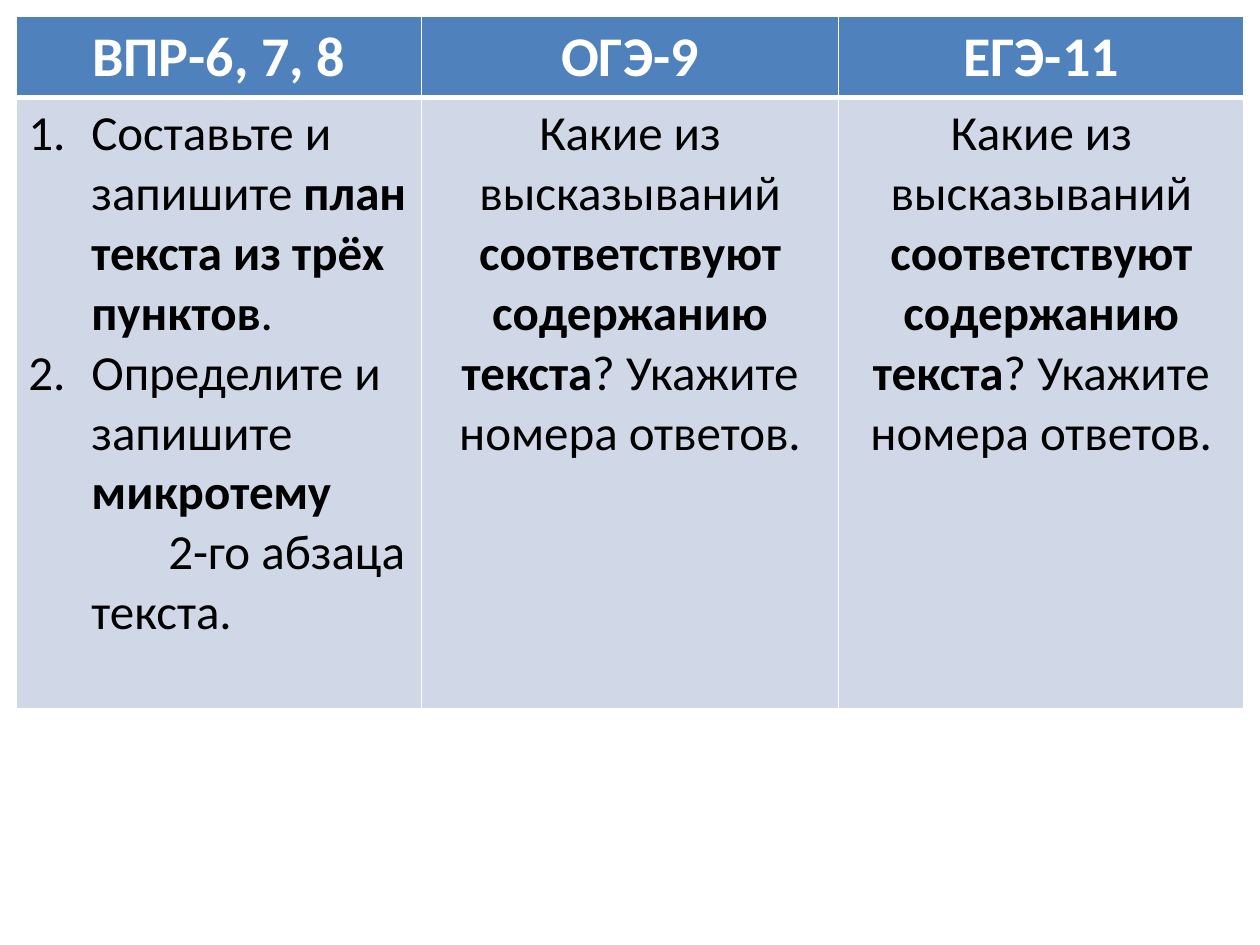
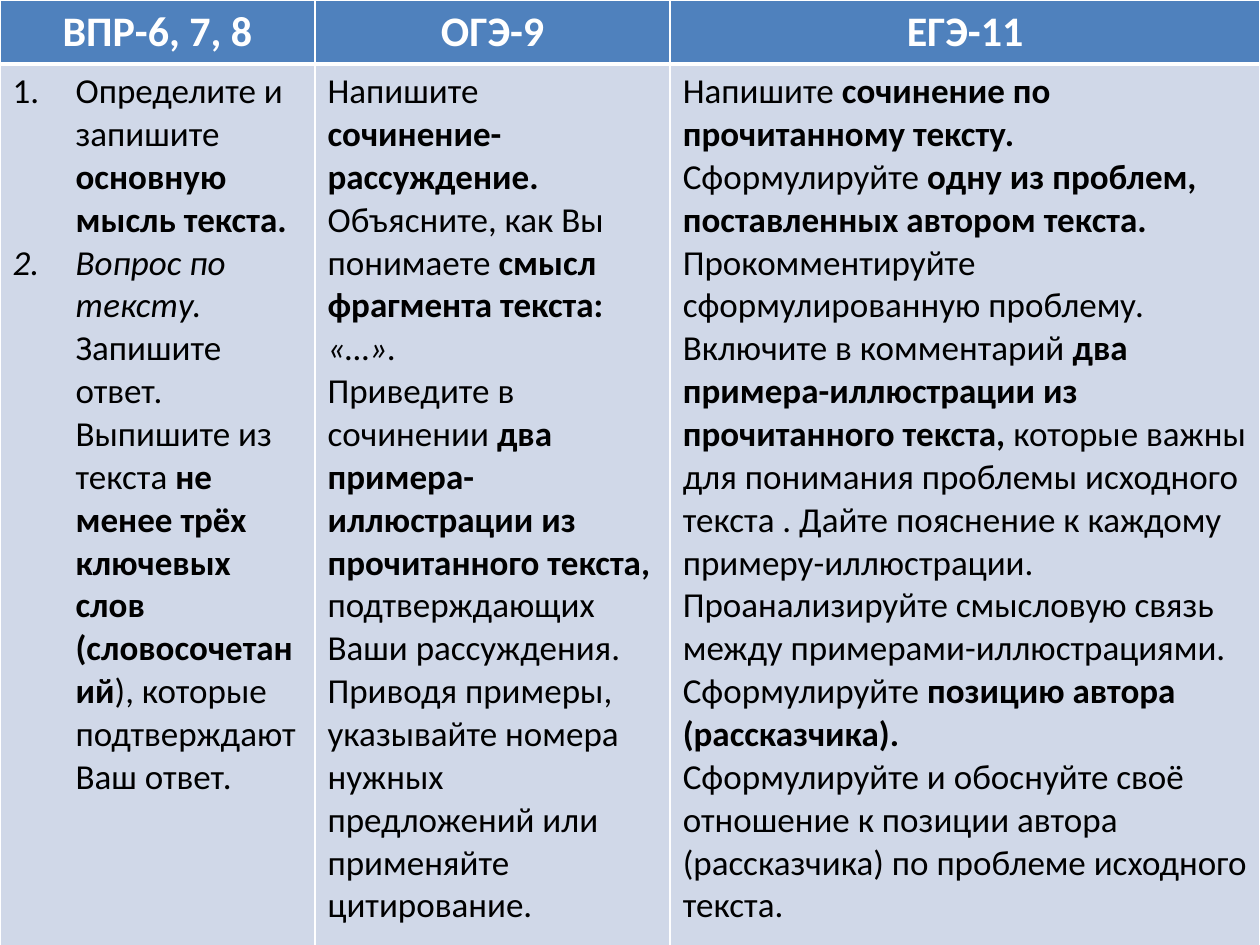
from dataclasses import dataclass

from lxml.etree import SubElement
from pptx import Presentation
from pptx.dml.color import RGBColor
from pptx.enum.text import PP_ALIGN as Align
from pptx.oxml.ns import qn
from pptx.util import Pt


@dataclass(frozen=True)
class Theme:
    font: str = "Calibri"
    header_fill: str = "4F81BD"
    header_text: str = "FFFFFF"
    body_fill: str = "D0D8E8"
    body_text: str = "000000"
    border: str = "FFFFFF"
    thin: float = 1
    thick: float = 3
    number_indent: float = 36


THEME = Theme()
BLANK_LAYOUT = 6
EXAMS = ("ВПР-6, 7, 8", "ОГЭ-9", "ЕГЭ-11")

# A paragraph is a list of runs; a run is plain text or (text, "bold" / "italic").
STATEMENTS = [[
    "Какие из высказываний ",
    ("соответствуют содержанию текста", "bold"),
    "? Укажите номера ответов.",
]]

# Each column: (paragraph kind, paragraphs); "numbered", "centred" or "plain".
# A paragraph given as (offset, runs) continues a numbered item, shifted by offset.
PLAN_COLUMNS = [
    ("numbered", [
        ["Составьте и запишите ", ("план текста из трёх пунктов", "bold"), "."],
        ["Определите и запишите ", ("микротему", "bold")],
        (44, ["2-го абзаца текста."]),
    ]),
    ("centred", STATEMENTS),
    ("centred", STATEMENTS),
]

ESSAY_COLUMNS = [
    ("numbered", [
        ["Определите и запишите ", ("основную мысль текста.", "bold")],
        [("Вопрос по тексту. ", "italic"), "Запишите ответ. Выпишите из текста ",
         ("не менее трёх ключевых слов (словосочетаний", "bold"),
         "), которые подтверждают Ваш ответ."],
    ]),
    ("plain", [
        ["Напишите ", ("сочинение-рассуждение. ", "bold"),
         "Объясните, как Вы понимаете ", ("смысл фрагмента текста: ", "bold"),
         ("«…».", "italic")],
        ["Приведите в сочинении ",
         ("два примера-иллюстрации из прочитанного текста, ", "bold"),
         "подтверждающих Ваши рассуждения."],
        ["Приводя примеры, указывайте номера нужных предложений "
         "или применяйте цитирование."],
    ]),
    ("plain", [
        ["Напишите ", ("сочинение по прочитанному тексту.", "bold")],
        ["Сформулируйте ", ("одну из проблем, поставленных автором текста.", "bold")],
        ["Прокомментируйте сформулированную проблему. Включите в комментарий ",
         ("два примера-иллюстрации из прочитанного текста, ", "bold"),
         "которые важны для понимания проблемы исходного текста . "
         "Дайте пояснение к каждому примеру-иллюстрации."],
        ["Проанализируйте смысловую связь между примерами-иллюстрациями."],
        ["Сформулируйте ", ("позицию автора (рассказчика).", "bold")],
        ["Сформулируйте и обоснуйте своё отношение к позиции автора "
         "(рассказчика) по проблеме исходного текста."],
    ]),
]

SLIDES = [
    dict(columns=PLAN_COLUMNS, left=9, top=9.5, widths=(232, 238, 232),
         heights=(46, 349), header_size=32, body_size=28),
    dict(columns=ESSAY_COLUMNS, left=0, top=0, widths=(180, 203, 337),
         heights=(36, 508), header_size=24, body_size=20),
]


def style_cell(cell, fill, top, bottom):
    """Give the cell a solid fill and borders; top and bottom are line widths."""
    properties = cell._tc.get_or_add_tcPr()
    sides = {"a:lnL": THEME.thin, "a:lnR": THEME.thin, "a:lnT": top, "a:lnB": bottom}
    for tag, width in sides.items():
        line = SubElement(properties, qn(tag), w=str(Pt(width)))
        SubElement(SubElement(line, qn("a:solidFill")), qn("a:srgbClr"), val=THEME.border)
    cell.fill.solid()
    cell.fill.fore_color.rgb = RGBColor.from_string(fill)


def set_indent(paragraph, first_line):
    properties = paragraph._p.get_or_add_pPr()
    properties.set("marL", str(Pt(THEME.number_indent)))
    properties.set("indent", str(Pt(first_line)))
    return properties


def set_font(paragraph, size, color):
    paragraph.font.name = THEME.font
    paragraph.font.size = Pt(size)
    paragraph.font.color.rgb = RGBColor.from_string(color)


def fill_header(cell, exam, size):
    style_cell(cell, THEME.header_fill, THEME.thin, THEME.thick)
    paragraph = cell.text_frame.paragraphs[0]
    paragraph.text = exam
    paragraph.alignment = Align.CENTER
    set_font(paragraph, size, THEME.header_text)
    paragraph.font.bold = True


def fill_body(cell, kind, paragraphs, size):
    style_cell(cell, THEME.body_fill, THEME.thick, THEME.thin)
    frame = cell.text_frame
    for index, runs in enumerate(paragraphs):
        paragraph = frame.add_paragraph() if index else frame.paragraphs[0]
        if isinstance(runs, tuple):
            offset, runs = runs
            set_indent(paragraph, offset)
        elif kind == "numbered":
            properties = set_indent(paragraph, -THEME.number_indent)
            SubElement(properties, qn("a:buFont"), typeface="+mj-lt")
            SubElement(properties, qn("a:buAutoNum"), type="arabicPeriod")
        elif kind == "centred":
            paragraph.alignment = Align.CENTER
        set_font(paragraph, size, THEME.body_text)
        for item in runs:
            text, emphasis = (item, None) if isinstance(item, str) else item
            run = paragraph.add_run()
            run.text = text
            if emphasis:
                setattr(run.font, emphasis, True)


def add_exam_slide(presentation, columns, left, top, widths, heights,
                   header_size, body_size):
    slide = presentation.slides.add_slide(presentation.slide_layouts[BLANK_LAYOUT])
    table = slide.shapes.add_table(len(heights), len(widths), Pt(left), Pt(top),
                                   Pt(sum(widths)), Pt(sum(heights))).table
    for row, height in zip(table.rows, heights):
        row.height = Pt(height)
    for index, (width, exam, (kind, paragraphs)) in enumerate(zip(widths, EXAMS, columns)):
        table.columns[index].width = Pt(width)
        fill_header(table.cell(0, index), exam, header_size)
        fill_body(table.cell(1, index), kind, paragraphs, body_size)


def main():
    presentation = Presentation()
    presentation.slide_width, presentation.slide_height = Pt(720), Pt(540)
    for slide_content in SLIDES:
        add_exam_slide(presentation, **slide_content)
    presentation.save("out.pptx")


if __name__ == "__main__":
    main()
